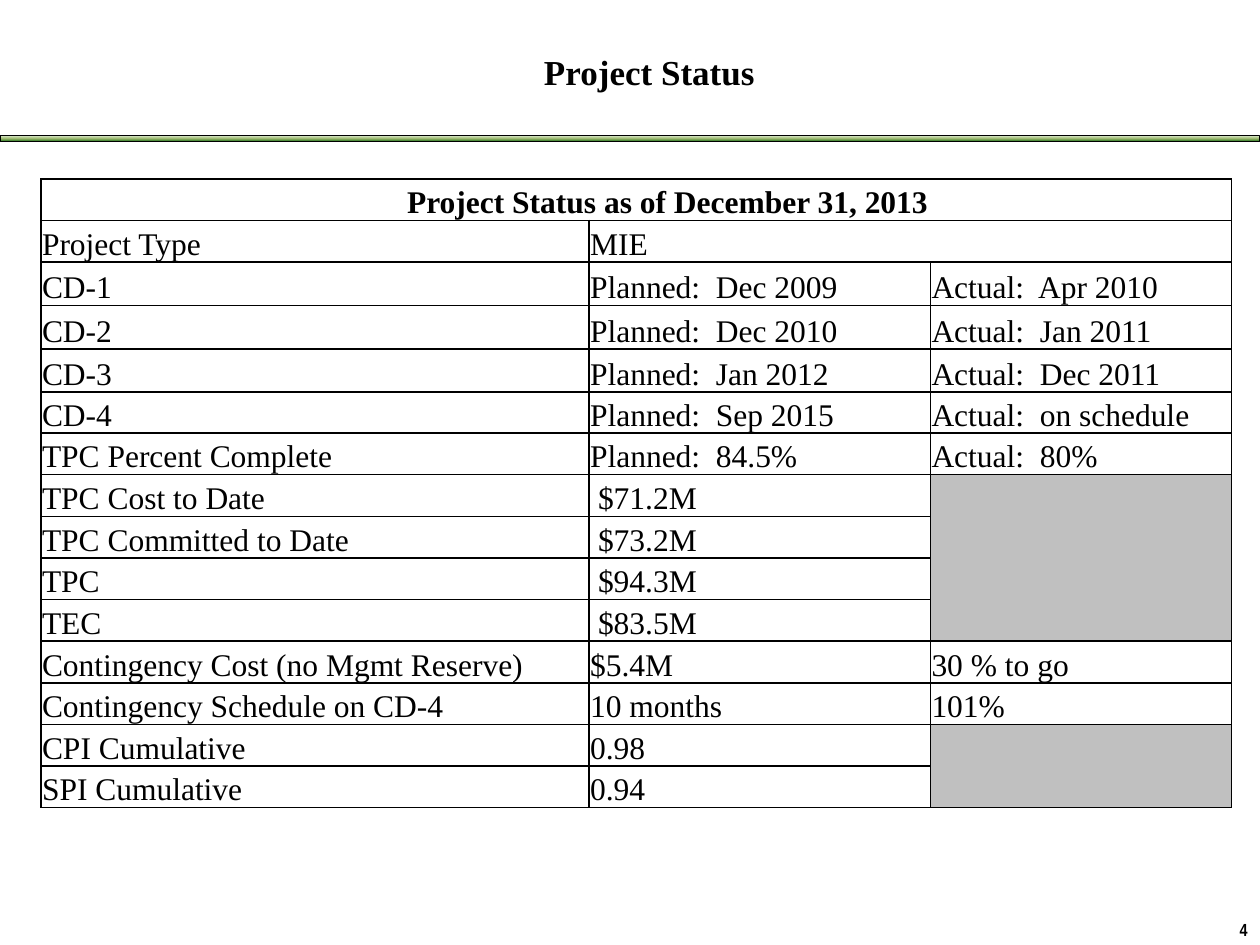
from copy import deepcopy
from dataclasses import dataclass

from lxml import etree
from pptx import Presentation
from pptx.dml.color import RGBColor
from pptx.enum.shapes import MSO_SHAPE
from pptx.enum.text import MSO_ANCHOR, PP_ALIGN
from pptx.oxml.ns import qn
from pptx.util import Pt

LEFT, CENTER, RIGHT = PP_ALIGN.LEFT, PP_ALIGN.CENTER, PP_ALIGN.RIGHT
MIDDLE, BOTTOM = MSO_ANCHOR.MIDDLE, MSO_ANCHOR.BOTTOM
RECTANGLE = MSO_SHAPE.RECTANGLE

SERIF = "Times New Roman"
BLACK, GRAY = "000000", "C0C0C0"
RULE_STOPS = ((0, "DDEBCF"), (0.5, "9CB86E"), (1, "156B13"))

COLUMN_WIDTHS = (313.2, 195.1, 172.1)
ROW_HEIGHT = 23.8
CELL_MARGIN = 0.72
HEADING_INDENT = 36
AMOUNT_INDENT = 4.5
# First and last cell of each merged block, as (row, column)
WIDE_BLOCKS = (((0, 0), (0, 2)), ((1, 1), (1, 2)))
GRAY_BLOCKS = (((7, 2), (10, 2)), ((13, 2), (14, 2)))


@dataclass
class StatusRow:
    label: str
    value: str = ""
    note: str = ""
    height: float = ROW_HEIGHT
    value_indent: float = 0


STATUS_ROWS = (
    StatusRow("Project Status as of December 31, 2013"),
    StatusRow("Project Type", "MIE"),
    StatusRow("CD-1", "Planned:  Dec 2009", "Actual:  Apr 2010", 24.8),
    StatusRow("CD-2", "Planned:  Dec 2010", "Actual:  Jan 2011", 24.8),
    StatusRow("CD-3", "Planned:  Jan 2012", "Actual:  Dec 2011", 24.8),
    StatusRow("CD-4", "Planned:  Sep 2015", "Actual:  on schedule", 23.4),
    StatusRow("TPC Percent Complete", "Planned:  84.5%", "Actual:  80%"),
    StatusRow("TPC Cost to Date", "$71.2M", value_indent=AMOUNT_INDENT),
    StatusRow("TPC Committed to Date", "$73.2M", value_indent=AMOUNT_INDENT),
    StatusRow("TPC", "$94.3M", value_indent=AMOUNT_INDENT),
    StatusRow("TEC", "$83.5M", value_indent=AMOUNT_INDENT),
    StatusRow("Contingency Cost (no Mgmt Reserve)", "$5.4M", "30 % to go"),
    StatusRow("Contingency Schedule on CD-4", "10 months", "101%"),
    StatusRow("CPI Cumulative", "0.98"),
    StatusRow("SPI Cumulative", "0.94"),
)


def rgb(color: str) -> RGBColor:
    return RGBColor.from_string(color)


def format_font(font, name: str, size: float, bold: bool = False) -> None:
    font.name, font.size, font.bold = name, Pt(size), bold
    font.color.rgb = rgb(BLACK)


def add_header_rule(slide) -> None:
    rule = slide.shapes.add_shape(RECTANGLE, Pt(0), Pt(77.5), Pt(720), Pt(3.6))
    rule.shadow.inherit = False
    rule.line.color.rgb = rgb(BLACK)
    rule.line.width = Pt(0.5)
    rule.fill.gradient()
    rule.fill.gradient_angle = 270
    first_stop = rule.fill._fill._gradFill.gsLst[0]
    first_stop.addnext(deepcopy(first_stop))
    for stop, (position, color) in zip(rule.fill.gradient_stops, RULE_STOPS):
        stop.position = position
        stop.color.rgb = rgb(color)


def add_slide_number(slide) -> None:
    box = slide.shapes.add_textbox(Pt(690.5), Pt(521.6), Pt(29.5), Pt(18.4))
    box.text_frame.word_wrap = True
    paragraph = box.text_frame.paragraphs[0]
    paragraph.text = "4"
    paragraph.alignment = RIGHT
    format_font(paragraph.runs[0].font, "Arial Narrow", 10, bold=True)


def format_title(title) -> None:
    title.left, title.top, title.width, title.height = Pt(203.3), Pt(12.2), Pt(335.5), Pt(69.8)
    frame = title.text_frame
    frame.text = "Project Status"
    frame.vertical_anchor = MIDDLE
    frame.margin_top, frame.margin_bottom = Pt(0), Pt(13)
    paragraph = frame.paragraphs[0]
    paragraph.alignment = CENTER
    format_font(paragraph.runs[0].font, SERIF, 20, bold=True)


def add_borders(cell) -> None:
    properties = cell._tc.get_or_add_tcPr()
    for side in "LRTB":
        line = etree.SubElement(properties, qn(f"a:ln{side}"), w=str(Pt(1)))
        fill = etree.SubElement(line, qn("a:solidFill"))
        etree.SubElement(fill, qn("a:srgbClr"), val=BLACK)


def format_cell(cell, text: str, indent: float, heading: bool) -> None:
    add_borders(cell)
    cell.fill.background()
    cell.vertical_anchor = BOTTOM
    cell.margin_left = Pt(CELL_MARGIN + indent)
    cell.margin_right = cell.margin_top = Pt(CELL_MARGIN)
    cell.margin_bottom = Pt(0)
    paragraph = cell.text_frame.paragraphs[0]
    paragraph.text = text
    paragraph.alignment = CENTER if heading else LEFT
    format_font(paragraph.font, SERIF, 18, heading)
    for run in paragraph.runs:
        format_font(run.font, SERIF, 18, heading)


def add_status_table(slide) -> None:
    height = sum(status.height for status in STATUS_ROWS)
    table = slide.shapes.add_table(
        len(STATUS_ROWS), len(COLUMN_WIDTHS),
        Pt(23.3), Pt(102.2), Pt(sum(COLUMN_WIDTHS)), Pt(height),
    ).table
    table.first_row = table.horz_banding = False
    for column, width in zip(table.columns, COLUMN_WIDTHS):
        column.width = Pt(width)
    for row, status in enumerate(STATUS_ROWS):
        table.rows[row].height = Pt(status.height)
        heading = row == 0
        texts = (status.label, status.value, status.note)
        indents = (HEADING_INDENT if heading else 0, status.value_indent, 0)
        for column, (text, indent) in enumerate(zip(texts, indents)):
            format_cell(table.cell(row, column), text, indent, heading)
    for first, last in WIDE_BLOCKS + GRAY_BLOCKS:
        table.cell(*first).merge(table.cell(*last))
    for first, _ in GRAY_BLOCKS:
        fill = table.cell(*first).fill
        fill.solid()
        fill.fore_color.rgb = rgb(GRAY)


def main() -> None:
    presentation = Presentation()
    presentation.slide_width, presentation.slide_height = Pt(720), Pt(540)
    slide = presentation.slides.add_slide(presentation.slide_layouts[5])
    add_header_rule(slide)
    format_title(slide.shapes.title)
    add_status_table(slide)
    add_slide_number(slide)
    presentation.save("out.pptx")


if __name__ == "__main__":
    main()
